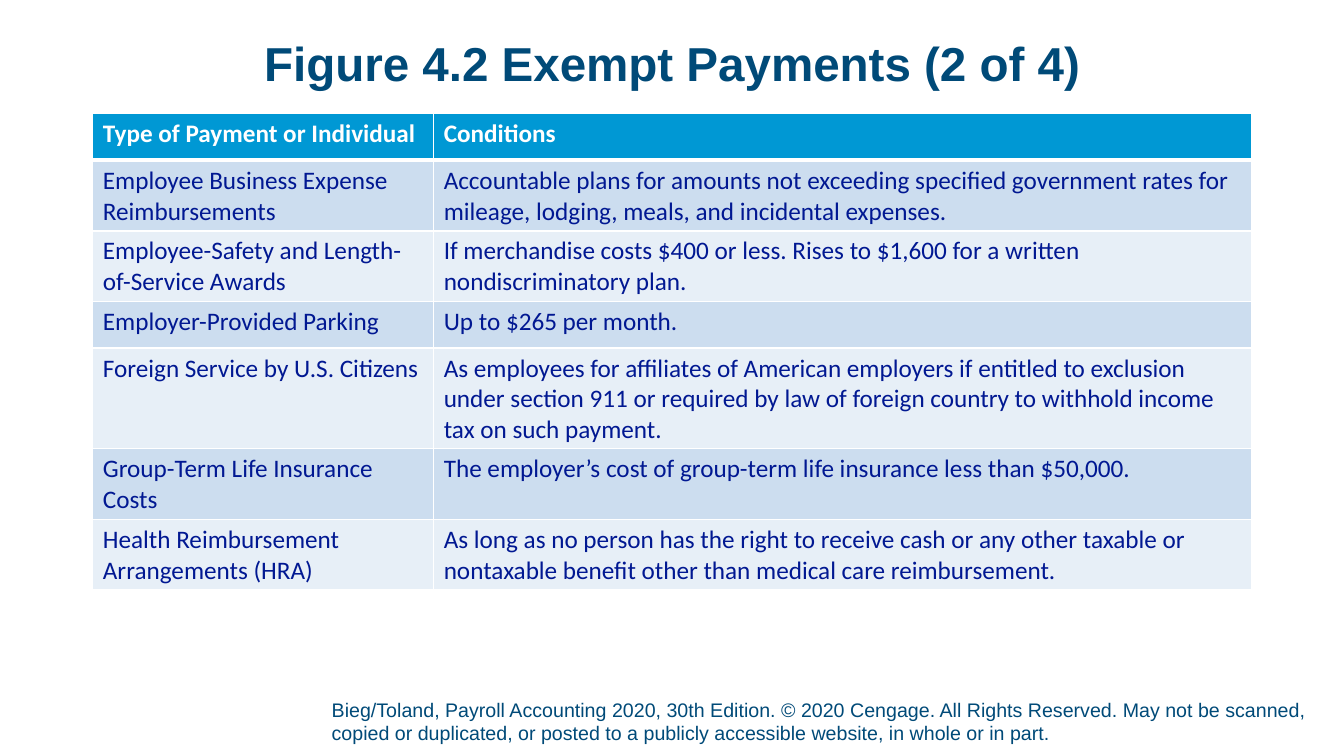
"""Build the exempt payments table slide."""
from lxml import etree
from pptx import Presentation
from pptx.dml.color import RGBColor as RGB
from pptx.enum.text import MSO_ANCHOR as ANCHOR, PP_ALIGN as ALIGN
from pptx.oxml.ns import qn
from pptx.util import Cm, Pt

COLORS = {"title": "004A78", "header": "0098D4", "band": "CCDDEF",
          "light": "E7EFF7", "body": "011892", "white": "FFFFFF"}

HEADER = ("Type of Payment or Individual", "Conditions")
PAYMENTS = [
    ("Employee Business Expense Reimbursements",
     "Accountable plans for amounts not exceeding specified government rates "
     "for mileage, lodging, meals, and incidental expenses."),
    ("Employee-Safety and Length-of-Service Awards",
     "If merchandise costs $400 or less. Rises to $1,600 for a written "
     "nondiscriminatory plan."),
    ("Employer-Provided Parking", "Up to $265 per month."),
    ("Foreign Service by U.S. Citizens",
     "As employees for affiliates of American employers if entitled to "
     "exclusion under section 911 or required by law of foreign country to "
     "withhold income tax on such payment."),
    ("Group-Term Life Insurance Costs",
     "The employer’s cost of group-term life insurance less than $50,000."),
    ("Health Reimbursement Arrangements (HRA)",
     "As long as no person has the right to receive cash or any other taxable "
     "or nontaxable benefit other than medical care reimbursement."),
]
COPYRIGHT = ("Bieg/Toland, Payroll Accounting 2020, 30th Edition. © 2020 Cengage. "
             "All Rights Reserved. May not be scanned, copied or duplicated, or "
             "posted to a publicly accessible website, in whole or in part.")


def add_run(p, text, size, color, font="Arial", bold=False):
    """Add one formatted run to a paragraph."""
    r = p.add_run()
    r.text = text
    r.font.name, r.font.size, r.font.bold = font, Pt(size), bold
    r.font.color.rgb = RGB.from_string(COLORS[color])


def add_text(s, box, text, size, anchor=ANCHOR.TOP, bottom=0, bold=False):
    """Add a wrapped text box and return its paragraph."""
    tf = s.shapes.add_textbox(*map(Cm, box)).text_frame
    tf.word_wrap = True
    tf.vertical_anchor = anchor
    tf.margin_left = tf.margin_top = tf.margin_right = 0
    tf.margin_bottom = Cm(bottom)
    p = tf.paragraphs[0]
    add_run(p, text, size, "title", bold=bold)
    return p


def set_borders(cell, bottom):
    """Draw white borders round a cell, with its own bottom width."""
    tc_pr = cell._tc.get_or_add_tcPr()
    for side, width in (("L", 1), ("R", 1), ("T", 1), ("B", bottom)):
        ln = etree.SubElement(tc_pr, qn(f"a:ln{side}"), w=str(Pt(width)))
        fill = etree.SubElement(ln, qn("a:solidFill"))
        etree.SubElement(fill, qn("a:srgbClr"), val=COLORS["white"])


def fill_row(row, texts, fill, color, bold=False, bottom=1):
    """Write and style the cells of one table row."""
    for cell, text in zip(row.cells, texts):
        set_borders(cell, bottom)
        cell.fill.solid()
        cell.fill.fore_color.rgb = RGB.from_string(COLORS[fill])
        add_run(cell.text_frame.paragraphs[0], text, 18, color, "Calibri", bold)


def add_payments(s):
    """Add the table of payments and their conditions."""
    count = len(PAYMENTS) + 1
    table = s.shapes.add_table(count, 2, Cm(2.34), Cm(2.87),
                               Cm(29.21), Cm(1.17 * count)).table
    for column, width in zip(table.columns, (8.59, 20.62)):
        column.width = Cm(width)
    header, *rows = table.rows
    fill_row(header, HEADER, "header", "white", bold=True, bottom=3)
    for i, (row, texts) in enumerate(zip(rows, PAYMENTS)):
        fill_row(row, texts, "light" if i % 2 else "band", "body",
                 bottom=1)


def main():
    """Build and save the slide."""
    prs = Presentation()
    prs.slide_width, prs.slide_height = Cm(33.87), Cm(19.05)
    s = prs.slides.add_slide(prs.slide_layouts[6])
    add_text(s, (8.36, 17.58, 24.87, 1.32), COPYRIGHT, 14, ANCHOR.BOTTOM, 0.13)
    add_payments(s)
    title = add_text(s, (2.34, 1.02, 29.21, 1.88),
                     "Figure 4.2 Exempt Payments (2 of 4)", 34, bold=True)
    title.alignment = ALIGN.CENTER
    title.line_spacing = 0.9
    prs.save("out.pptx")


if __name__ == "__main__":
    main()
